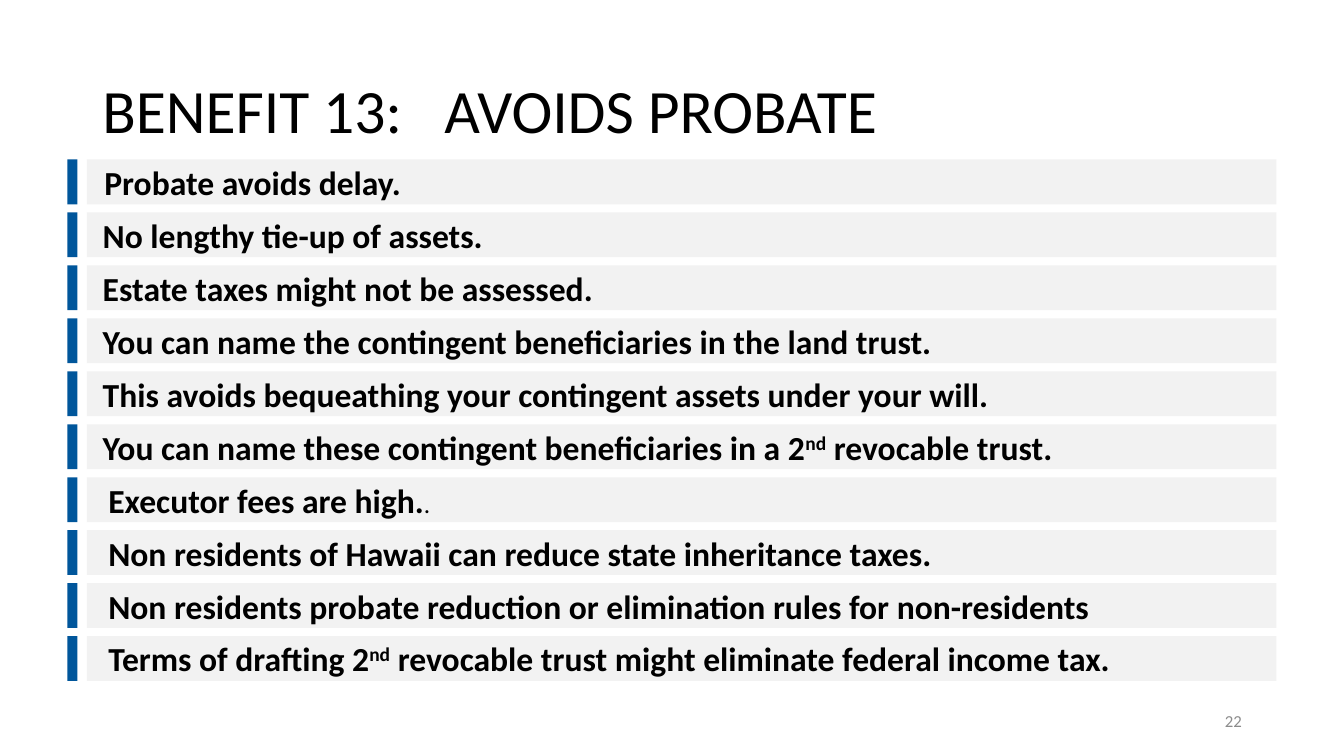
from lxml.etree import SubElement
from pptx import Presentation
from pptx.dml.color import RGBColor
from pptx.enum.shapes import MSO_SHAPE
from pptx.enum.text import MSO_ANCHOR, PP_ALIGN
from pptx.oxml.ns import qn
from pptx.util import Cm, Pt

COLORS = {"text": "000000", "number": "8C8C8C", "row": "F2F2F2", "accent": "00569B"}
FONT = "Calibri"
FIRST_TOP, LAST_TOP, ROW_HEIGHT = 4.02, 16.03, 1.13
TITLE_TAB = 8.62

# Left inset in cm, then the runs: (text, size, style)
BENEFITS = [
    (0.44, [("Probate avoids delay.", 24, "bold")]),
    (0.40, [("No lengthy tie-up of assets.", 24, "bold")]),
    (0.40, [("Estate taxes might not be assessed.", 24, "bold")]),
    (0.40, [("You can name the contingent beneficiaries in the land trust.", 24, "bold")]),
    (0.40, [("This avoids bequeathing your contingent assets under your will.", 24, "bold")]),
    (0.40, [("You can name these contingent beneficiaries in a 2", 24, "bold"),
            ("nd", 24, "superscript"),
            (" revocable trust.", 24, "bold")]),
    (0.54, [("Executor fees are high.", 24, "bold"), (".", 18, "plain")]),
    (0.54, [("Non residents of Hawaii can reduce state inheritance taxes.", 24, "bold")]),
    (0.54, [("Non residents probate reduction or elimination rules for non-residents", 24, "bold")]),
    (0.54, [("Terms of drafting 2", 24, "bold"),
            ("nd", 24, "superscript"),
            (" revocable trust might eliminate federal income tax.", 24, "bold")]),
]


def add_run(paragraph, text, size, style="plain", color="text"):
    run = paragraph.add_run()
    run.text = text
    run.font.name = FONT
    run.font.size = Pt(size)
    run.font.bold = style != "plain"
    run.font.color.rgb = RGBColor.from_string(COLORS[color])
    if style == "superscript":
        run._r.get_or_add_rPr().set("baseline", "30000")


def add_label(slide, left, top, width, height):
    """Add an empty wrapped text box and return its first paragraph."""
    frame = slide.shapes.add_textbox(Cm(left), Cm(top), Cm(width), Cm(height)).text_frame
    frame.word_wrap = True
    frame.vertical_anchor = MSO_ANCHOR.MIDDLE
    return frame.paragraphs[0]


def add_title(slide):
    heading = add_label(slide, 2.33, 1.01, 29.21, 3.68)
    heading.line_spacing = 0.9
    tabs = SubElement(heading._p.get_or_add_pPr(), qn("a:tabLst"))
    SubElement(tabs, qn("a:tab"), pos=str(Cm(TITLE_TAB)), algn="l")
    add_run(heading, "BENEFIT 13:\tAVOIDS PROBATE", 44)


def add_slide_number(slide):
    number = add_label(slide, 23.93, 17.65, 7.62, 1.02)
    number.alignment = PP_ALIGN.RIGHT
    add_run(number, "22", 12, color="number")


def add_bar(shapes, left, top, width, color):
    bar = shapes.add_shape(MSO_SHAPE.RECTANGLE, Cm(left), Cm(top), Cm(width), Cm(ROW_HEIGHT))
    bar.shadow.inherit = False
    bar.fill.solid()
    bar.fill.fore_color.rgb = RGBColor.from_string(COLORS[color])
    bar.line.fill.background()
    return bar


def add_benefit(slide, top, inset, runs):
    frame = add_bar(slide.shapes, 2.19, top, 29.98, "row").text_frame
    frame.word_wrap = True
    frame.vertical_anchor = MSO_ANCHOR.MIDDLE
    frame.margin_left = Cm(inset)
    frame.margin_top = frame.margin_bottom = 0
    benefit = frame.paragraphs[0]
    benefit.alignment = PP_ALIGN.LEFT
    for text, size, style in runs:
        add_run(benefit, text, size, style)


def main():
    deck = Presentation()
    deck.slide_width, deck.slide_height = Cm(33.87), Cm(19.05)
    slide = deck.slides.add_slide(deck.slide_layouts[6])
    add_title(slide)
    add_slide_number(slide)

    pitch = (LAST_TOP - FIRST_TOP) / (len(BENEFITS) - 1)
    tops = [FIRST_TOP + i * pitch for i in range(len(BENEFITS))]
    for top, (inset, runs) in zip(tops, BENEFITS):
        add_benefit(slide, top, inset, runs)
    accents = slide.shapes.add_group_shape()
    for top in tops:
        add_bar(accents.shapes, 1.7, top, 0.25, "accent")

    deck.save("out.pptx")


if __name__ == "__main__":
    main()
